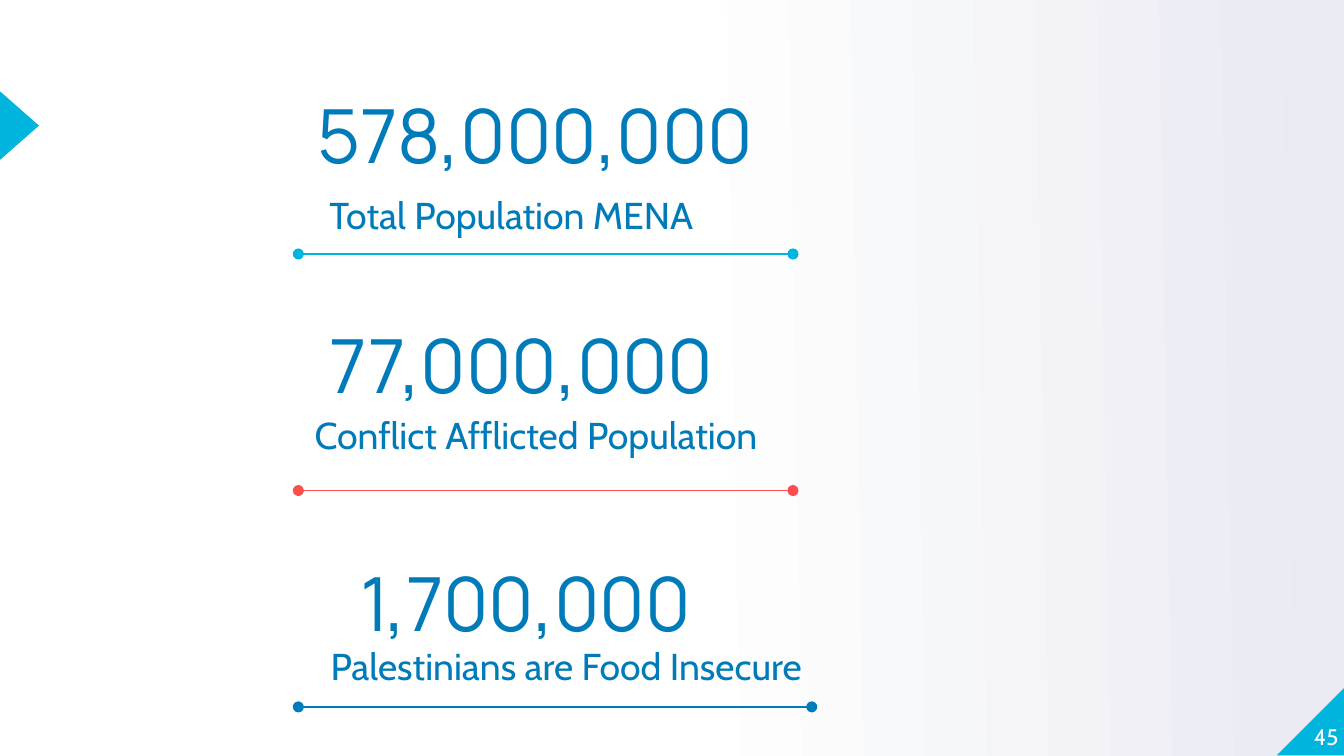
from dataclasses import dataclass

from lxml.etree import SubElement
from pptx import Presentation
from pptx.dml.color import RGBColor
from pptx.enum.shapes import MSO_CONNECTOR, MSO_SHAPE
from pptx.enum.text import MSO_ANCHOR as Anchor, MSO_AUTO_SIZE, PP_ALIGN as Align
from pptx.oxml.ns import qn
from pptx.util import Inches, Pt


@dataclass(frozen=True)
class Theme:
    white: RGBColor = RGBColor.from_string("FFFFFF")
    mist: RGBColor = RGBColor.from_string("E9EAF2")
    cyan: RGBColor = RGBColor.from_string("00B5DD")
    blue: RGBColor = RGBColor.from_string("007BB9")
    red: RGBColor = RGBColor.from_string("FF4D4D")
    figure_font: str = "Manrope"
    text_font: str = "Cabin"
    figure_size: Pt = Pt(40)
    label_size: Pt = Pt(20)
    number_size: Pt = Pt(12)


theme = Theme()


def write(box, place, text, font, size, color, anchor=Anchor.TOP, align=Align.LEFT, spacing=1.0):
    """Place a text holder without insets and fill it with one formatted line."""
    box.left, box.top, box.width, box.height = map(Inches, place)
    frame = box.text_frame
    frame.text = text
    frame.word_wrap = True
    frame.auto_size = MSO_AUTO_SIZE.NONE
    frame.vertical_anchor = anchor
    frame.margin_left = frame.margin_top = frame.margin_right = frame.margin_bottom = 0
    para = frame.paragraphs[0]
    para.alignment = align
    para.line_spacing = spacing
    span = para.runs[0]
    span.font.name = font
    span.font.size = size
    span.font.color.rgb = color


deck = Presentation()
deck.slide_width = Inches(10)
deck.slide_height = Inches(10 * 9 / 16)
page = deck.slides.add_slide(deck.slide_layouts[5])

# Background: white up to the middle, then fading to mist
backdrop = page.background.fill
backdrop.gradient()
backdrop.gradient_angle = 1
for stop, position, color in zip(backdrop.gradient_stops, (0.5, 1), (theme.white, theme.mist)):
    stop.position = position
    stop.color.rgb = color

# Corner and side marker
corner = page.shapes.add_shape(
    MSO_SHAPE.RIGHT_TRIANGLE, Inches(9.5), Inches(5.11), Inches(0.51), Inches(0.51))
corner.element.spPr.xfrm.set("flipH", "1")
marker = page.shapes.add_shape(
    MSO_SHAPE.ISOSCELES_TRIANGLE, Inches(-0.11), Inches(0.79), Inches(0.51), Inches(0.29))
marker.rotation = 90
for accent in (corner, marker):
    accent.shadow.inherit = False
    accent.fill.solid()
    accent.fill.fore_color.rgb = theme.cyan
    accent.line.fill.background()

page_number = page.shapes.add_textbox(0, 0, 0, 0)
write(page_number, (9.46, 5.07, 0.5, 0.51), "45", theme.text_font, theme.number_size,
      theme.white, Anchor.BOTTOM, Align.RIGHT)

# figure, its left and top, label, its left and top, rule's right end, its height and colour
statistics = [
    ("578,000,000", 2.36, 0.79, "Total Population MENA", 2.45, 1.41, 5.9, 1.89, theme.cyan),
    ("77,000,000", 2.45, 2.5, "Conflict Afflicted Population", 2.34, 3.04, 5.9, 3.65, theme.red),
    ("1,700,000", 2.68, 4.27, "Palestinians are Food Insecure", 2.46, 4.76, 6.04, 5.26, theme.blue),
]

for index, statistic in enumerate(statistics):
    figure, figure_x, figure_y, label, label_x, label_y, rule_end, rule_y, color = statistic
    figure_box = page.shapes.add_textbox(0, 0, 0, 0) if index else page.shapes.title
    write(figure_box, (figure_x, figure_y, 4.25, 0.34), figure, theme.figure_font,
          theme.figure_size, theme.blue, spacing=0.8)
    label_box = page.shapes.add_textbox(0, 0, 0, 0)
    write(label_box, (label_x, label_y, 3.91, 0.38), label, theme.text_font,
          theme.label_size, theme.blue, Anchor.MIDDLE)

    rule = page.shapes.add_connector(
        MSO_CONNECTOR.STRAIGHT, Inches(2.22), Inches(rule_y), Inches(rule_end), Inches(rule_y))
    rule.line.color.rgb = color
    rule.line.width = Pt(0.75)
    outline = rule.line._get_or_add_ln()
    for end in ("a:headEnd", "a:tailEnd"):
        SubElement(outline, qn(end), type="oval")
    SubElement(rule.element.spPr, qn("a:effectLst"))

deck.save("out.pptx")
